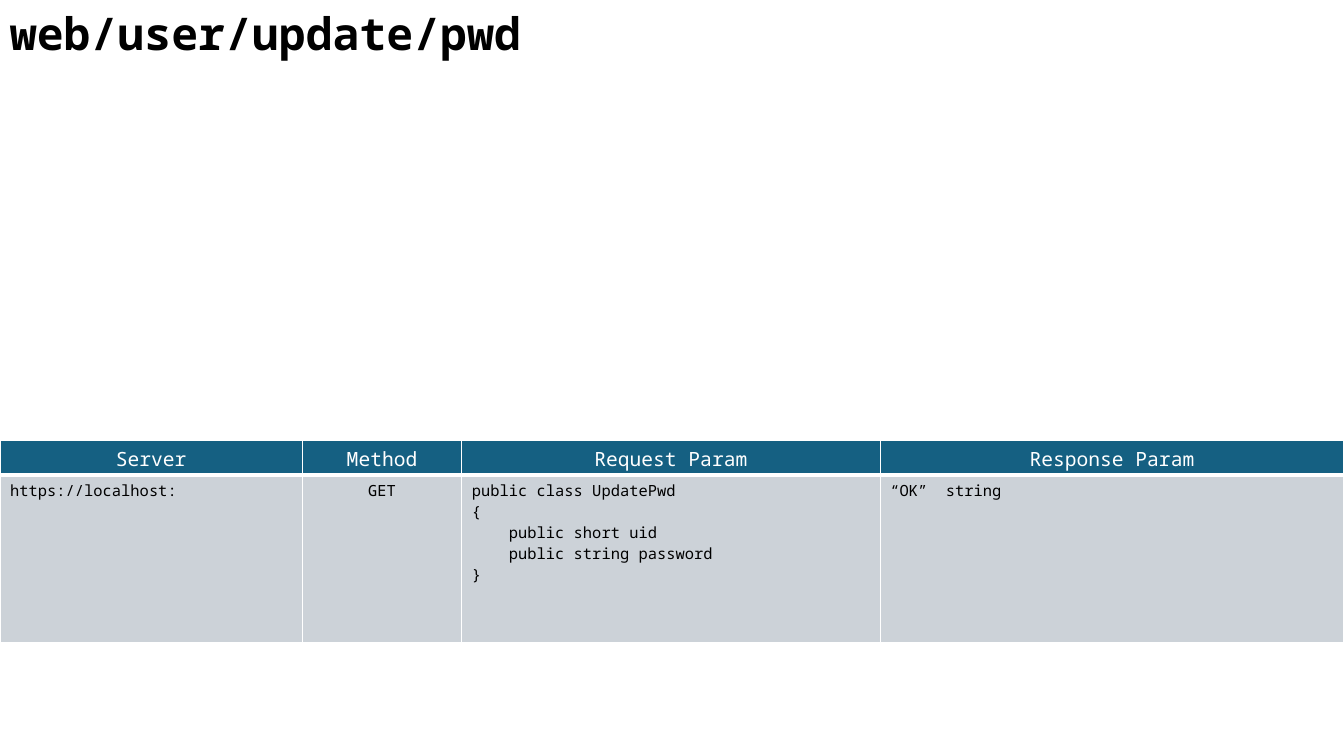
from dataclasses import dataclass

from lxml import etree
from pptx import Presentation
from pptx.dml.color import RGBColor
from pptx.enum.text import MSO_ANCHOR, PP_ALIGN
from pptx.oxml.ns import qn
from pptx.util import Inches, Pt

LEFT, CENTER = PP_ALIGN.LEFT, PP_ALIGN.CENTER
MIDDLE = MSO_ANCHOR.MIDDLE


@dataclass(frozen=True)
class Theme:
    font: str = "Noto Sans Mono"
    ink: str = "000000"
    white: str = "FFFFFF"
    head: str = "156082"
    body: str = "CCD2D8"
    title_size: int = 32
    head_size: int = 14
    body_size: int = 11
    line: int = 1
    rule: int = 3


THEME = Theme()

HEADS = ["Server", "Method", "Request Param", "Response Param"]
CODE = """public class UpdatePwd
{
    public short uid
    public string password
}"""
VALUES = ["https://localhost:", "GET", CODE, "“OK”  string"]
ALIGNS = [LEFT, CENTER, LEFT, LEFT]
WIDTHS = [3, 1.58, 4.15, 4.6]


def write(frame, text, size, color=THEME.ink, bold=False, align=LEFT):
    """Fill a text frame, one paragraph for each line."""
    frame.word_wrap = True
    for i, line in enumerate(text.split("\n")):
        para = frame.paragraphs[0] if i == 0 else frame.add_paragraph()
        para.alignment = align
        run = para.add_run()
        run.text = line
        font = run.font
        font.name, font.size, font.bold = THEME.font, Pt(size), bold
        font.color.rgb = RGBColor.from_string(color)


def edge(cell, top, bottom):
    """Draw white borders, which must come before the cell's fill."""
    props = cell._tc.get_or_add_tcPr()
    sides = {"L": THEME.line, "R": THEME.line, "T": top, "B": bottom}
    for side, width in sides.items():
        line = etree.SubElement(props, qn(f"a:ln{side}"), w=str(Pt(width)))
        fill = etree.SubElement(line, qn("a:solidFill"))
        etree.SubElement(fill, qn("a:srgbClr"), val=THEME.white)


def paint(cell, color):
    cell.fill.solid()
    cell.fill.fore_color.rgb = RGBColor.from_string(color)


def add_title(slide, left, top, width, height):
    box = slide.shapes.add_textbox(*map(Inches, (left, top, width, height)))
    box.text_frame.vertical_anchor = MIDDLE
    write(box.text_frame, "web/user/update/pwd", THEME.title_size, bold=True)


def add_grid(slide, left, top, width, height, head=0.34):
    box = map(Inches, (left, top, width, height))
    table = slide.shapes.add_table(2, len(HEADS), *box).table
    table.horz_banding = False
    table.rows[0].height = Inches(head)
    table.rows[1].height = Inches(height - head)
    for i, share in enumerate(WIDTHS):
        table.columns[i].width = Inches(width * share / sum(WIDTHS))

        # Header cell
        cell = table.cell(0, i)
        cell.margin_bottom = Inches(0.02)
        edge(cell, THEME.line, THEME.rule)
        paint(cell, THEME.head)
        write(cell.text_frame, HEADS[i], THEME.head_size,
              color=THEME.white, align=CENTER)

        # Value cell
        cell = table.cell(1, i)
        edge(cell, THEME.rule, THEME.line)
        paint(cell, THEME.body)
        write(cell.text_frame, VALUES[i], THEME.body_size, align=ALIGNS[i])


def main():
    deck = Presentation()
    deck.slide_width, deck.slide_height = Inches(13.33), Inches(7.5)
    slide = deck.slides.add_slide(deck.slide_layouts[6])
    add_title(slide, 0, 0, 9.45, 0.64)
    add_grid(slide, 0, 4.37, 13.33, 2.01)
    deck.save("out.pptx")


if __name__ == "__main__":
    main()
